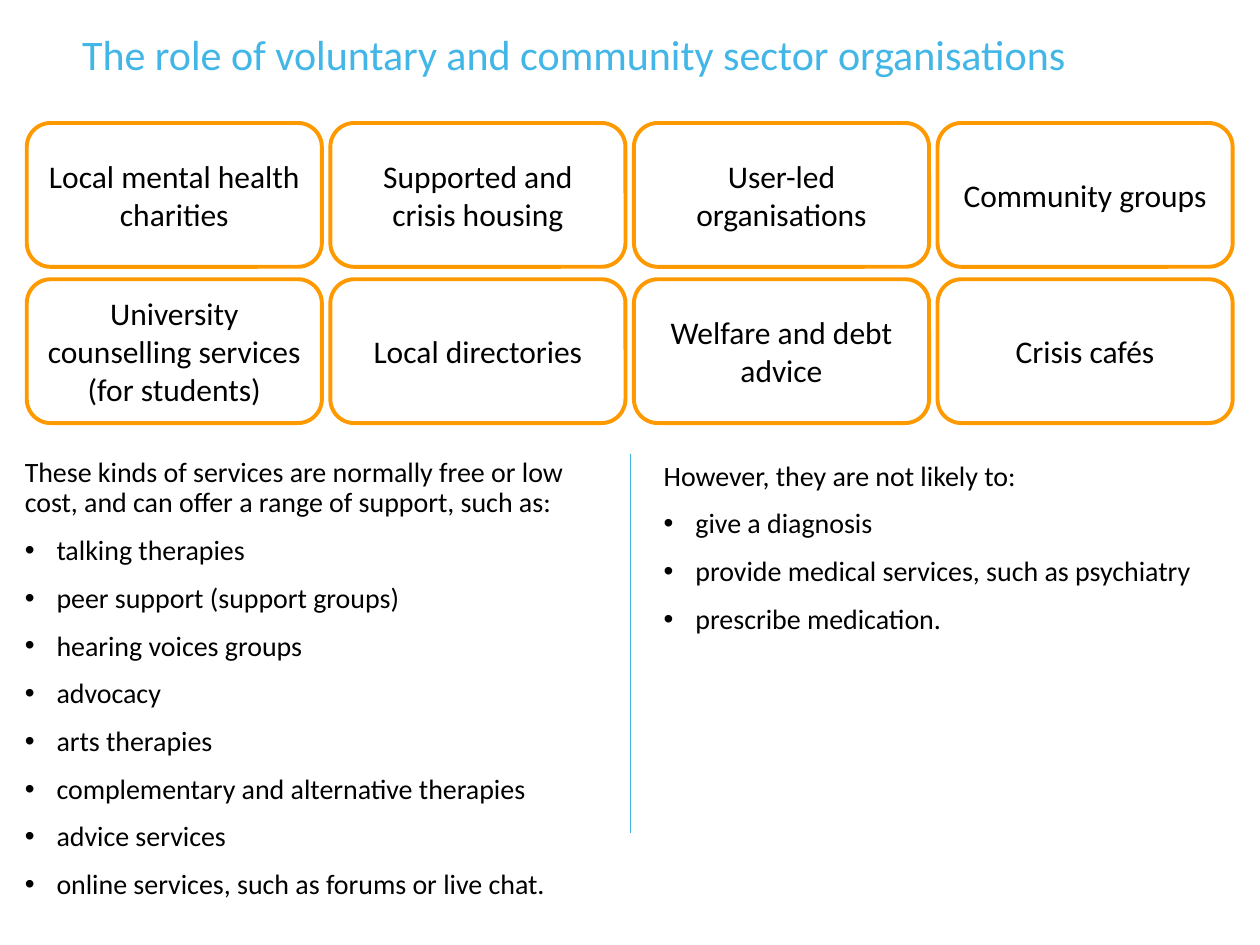
from dataclasses import dataclass

from lxml.etree import SubElement
from pptx import Presentation
from pptx.dml.color import RGBColor
from pptx.enum.shapes import MSO_CONNECTOR as Connector, MSO_SHAPE as Shape
from pptx.enum.text import MSO_ANCHOR as Anchor, MSO_AUTO_SIZE as AutoSize, PP_ALIGN as Align
from pptx.oxml.ns import qn
from pptx.util import Cm, Pt


@dataclass(frozen=True)
class Theme:
    font: str = "Calibri"
    bullet_font: str = "Arial"
    title: RGBColor = RGBColor.from_string("42B6E6")
    divider: RGBColor = RGBColor.from_string("41B6E6")
    outline: RGBColor = RGBColor.from_string("FF9900")
    fill: RGBColor = RGBColor.from_string("FFFFFF")
    text: RGBColor = RGBColor.from_string("000000")
    title_size: Pt = Pt(24)
    card_size: Pt = Pt(18)
    body_size: Pt = Pt(16)


theme = Theme()


def add_span(para, text, size, color):
    span = para.add_run()
    span.text = text
    span.font.name = theme.font
    span.font.size = size
    span.font.color.rgb = color


def add_list(page, left, height, intro, intro_spacing, items):
    box = page.shapes.add_textbox(left, Cm(9.12), Cm(12.04), height)
    frame = box.text_frame
    frame.word_wrap = True
    frame.auto_size = AutoSize.NONE
    para = frame.paragraphs[0]
    para.line_spacing = intro_spacing
    add_span(para, intro, theme.body_size, theme.text)
    for item in items:
        para = frame.add_paragraph()
        para.line_spacing = 0.9
        para.space_before = Pt(10)
        properties = para._p.get_or_add_pPr()
        properties.set("marL", str(Cm(0.64)))
        properties.set("indent", str(-Cm(0.64)))
        SubElement(properties, qn("a:buFont"), typeface=theme.bullet_font)
        SubElement(properties, qn("a:buChar"), char="•")
        add_span(para, item, theme.body_size, theme.text)


deck = Presentation()
deck.slide_width = Cm(25.4)
deck.slide_height = Cm(19.05)
page = deck.slides.add_slide(deck.slide_layouts[5])

title = page.shapes.title
title.left, title.top, title.width, title.height = Cm(1.4), Cm(0.56), Cm(23.01), Cm(2.62)
title.text_frame.word_wrap = True
title.text_frame.auto_size = AutoSize.NONE
title.text_frame.vertical_anchor = Anchor.TOP
para = title.text_frame.paragraphs[0]
para.alignment = Align.LEFT
para.line_spacing = 0.9
add_span(para, "The role of voluntary and community sector organisations",
         theme.title_size, theme.title)

services = [
    "Local mental health charities",
    "Supported and crisis housing",
    "User-led organisations",
    "Community groups",
    "University counselling services (for students)",
    "Local directories",
    "Welfare and debt advice",
    "Crisis cafés",
]
for index, service in enumerate(services):
    row, column = divmod(index, 4)
    card = page.shapes.add_shape(
        Shape.ROUNDED_RECTANGLE,
        Cm(0.54 + 6.12 * column), Cm(2.48 + 3.15 * row), Cm(5.95), Cm(2.9))
    card.shadow.inherit = False
    card.fill.solid()
    card.fill.fore_color.rgb = theme.fill
    card.line.color.rgb = theme.outline
    card.line.width = Pt(2.25)
    card.text_frame.word_wrap = True
    card.text_frame.vertical_anchor = Anchor.MIDDLE
    para = card.text_frame.paragraphs[0]
    para.alignment = Align.CENTER
    add_span(para, service, theme.card_size, theme.text)

add_list(
    page, Cm(0.25), Cm(9.4),
    "These kinds of services are normally free or low cost, "
    "and can offer a range of support, such as:",
    0.9,
    [
        "talking therapies",
        "peer support (support groups)",
        "hearing voices groups",
        "advocacy",
        "arts therapies",
        "complementary and alternative therapies",
        "advice services",
        "online services, such as forums or live chat.",
    ])
add_list(
    page, Cm(13.13), Cm(3.86),
    "However, they are not likely to:",
    1.0,
    [
        "give a diagnosis",
        "provide medical services, such as psychiatry",
        "prescribe medication.",
    ])

divider = page.shapes.add_connector(
    Connector.STRAIGHT, Cm(12.7), Cm(9.15), Cm(12.7), Cm(16.8))
divider.line.color.rgb = theme.divider
divider.line.width = Pt(0.5)
SubElement(divider._element.spPr, qn("a:effectLst"))

deck.save("out.pptx")
